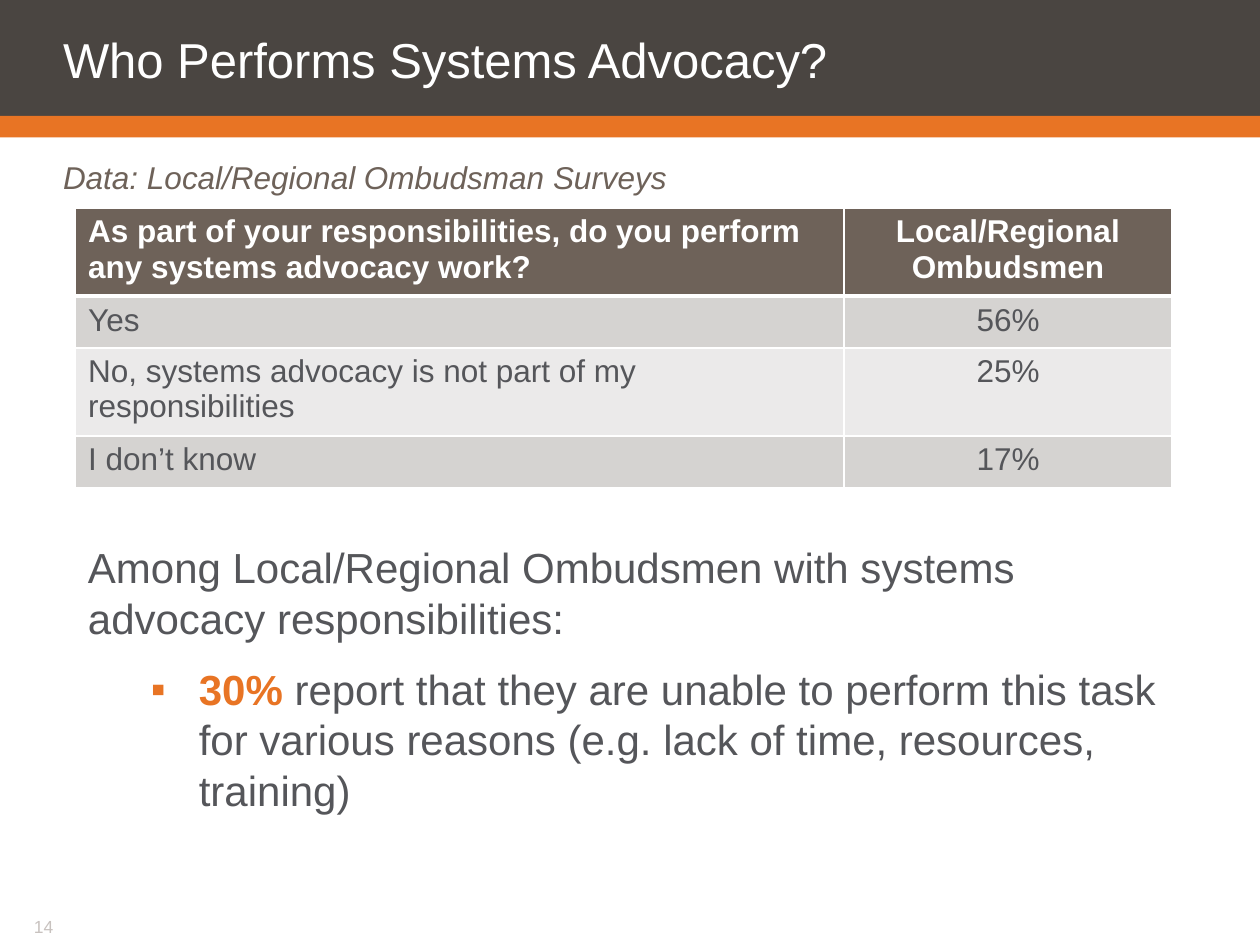
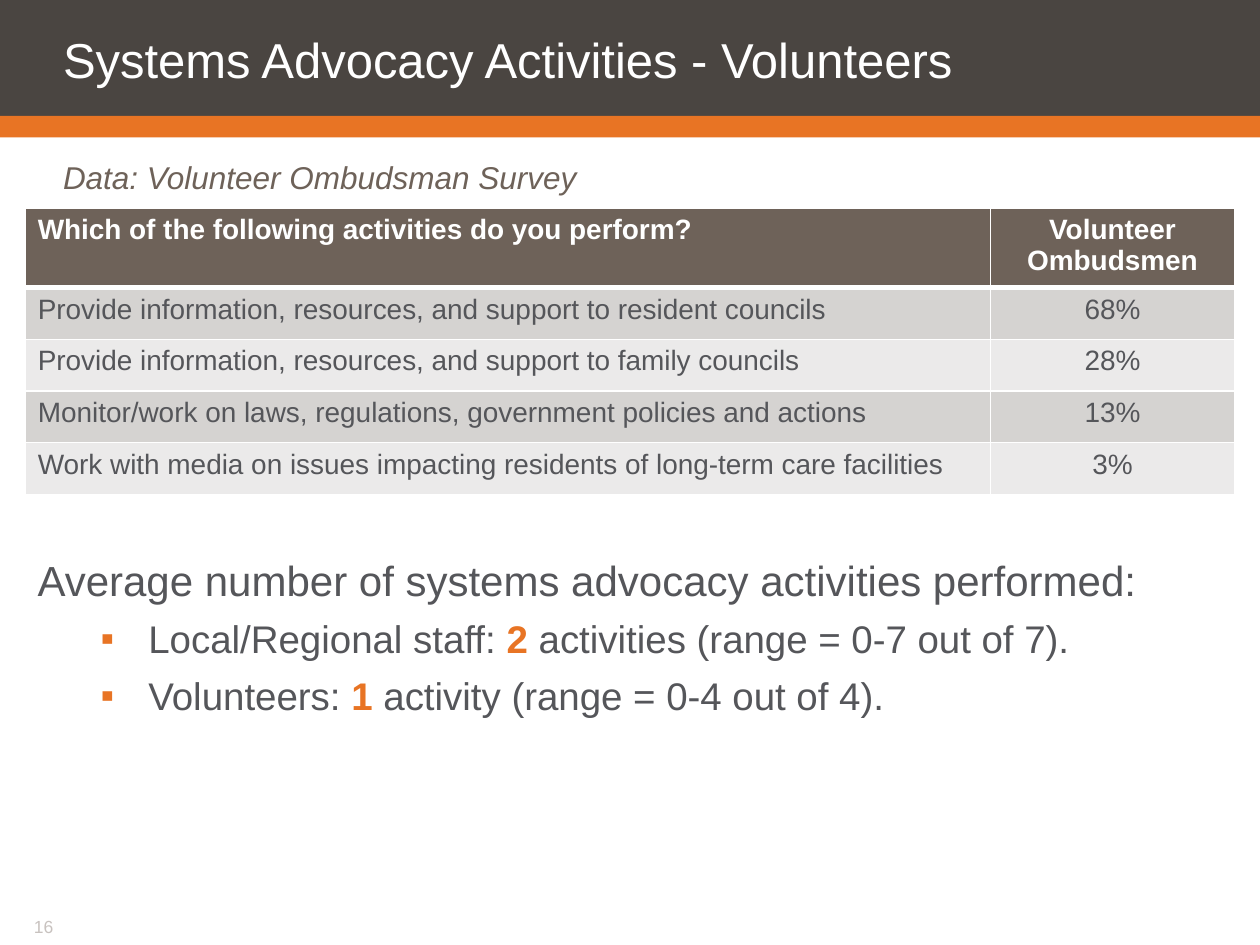
import pptx
import pptx.dml.color
import pptx.enum.shapes
import pptx.enum.text
import pptx.oxml
import pptx.oxml.ns
import pptx.util
from lxml import etree

Inches = pptx.util.Inches
Pt = pptx.util.Pt
ALIGN = pptx.enum.text.PP_ALIGN
ANCHOR = pptx.enum.text.MSO_ANCHOR

FONT = "Arial"
COLORS = {
    "band": "4A4541",
    "accent": "E87424",
    "header": "6E6259",
    "text": "55565A",
    "row_dark": "D5D3D1",
    "row_light": "EBEAEA",
    "page": "C8C2BF",
    "white": "FFFFFF",
}
SLIDE_WIDTH, SLIDE_HEIGHT = 10, 7.5
TITLE_BOX = (0, 0, SLIDE_WIDTH, 0.92)
STRIPE_BOX = (0, 0.92, SLIDE_WIDTH, 0.17)
SOURCE_BOX = (0, 1.22, SLIDE_WIDTH, 0.33)
PAGE_BOX = (0.17, 7.27, 1.92, 0.18)
ROW_HEIGHT = 0.41


def rgb(color):
    return pptx.dml.color.RGBColor.from_string(COLORS[color])


def style_font(font, size, color, bold=False, italic=False):
    font.name, font.size = FONT, Pt(size)
    font.bold, font.italic = bold, italic
    font.color.rgb = rgb(color)


def place(shape, box):
    shape.left, shape.top, shape.width, shape.height = map(Inches, box)


def set_insets(frame, left, top, right, bottom):
    frame.margin_left, frame.margin_top = Inches(left), Inches(top)
    frame.margin_right, frame.margin_bottom = Inches(right), Inches(bottom)


def add_child(parent, tag, **attributes):
    return etree.SubElement(parent, pptx.oxml.ns.qn(tag), attributes)


def set_bullet(paragraph, character=None):
    """Give the paragraph an indented orange bullet, or none at all."""
    properties = paragraph._p.get_or_add_pPr()
    if character is None:
        properties.set("marL", "0")
        properties.set("indent", "0")
        add_child(properties, "a:buNone")
        return
    properties.set("lvl", "1")
    properties.set("marL", str(Inches(0.88)))
    properties.set("indent", str(Inches(-0.38)))
    add_child(add_child(properties, "a:buClr"), "a:srgbClr", val=COLORS["accent"])
    add_child(properties, "a:buFont", typeface=FONT)
    add_child(properties, "a:buChar", char=character)


def add_band(slide, box, color):
    """Draw a full-width band behind everything else on the slide."""
    band = slide.shapes.add_shape(
        pptx.enum.shapes.MSO_SHAPE.RECTANGLE, *map(Inches, box))
    band.shadow.inherit = False
    band.fill.solid()
    band.fill.fore_color.rgb = rgb(color)
    band.line.fill.background()
    slide.shapes.element.insert(2, band._element)


def fill_placeholder(placeholder, box, text, insets, anchor):
    place(placeholder, box)
    frame = placeholder.text_frame
    frame.text = text
    frame.word_wrap = True
    frame.auto_size = pptx.enum.text.MSO_AUTO_SIZE.NONE
    frame.vertical_anchor = anchor
    set_insets(frame, *insets)
    paragraph = frame.paragraphs[0]
    set_bullet(paragraph)
    paragraph.alignment = ALIGN.LEFT
    paragraph.space_before = Pt(0)
    return paragraph


def add_page_number(slide, box, number):
    frame = slide.shapes.add_textbox(*map(Inches, box)).text_frame
    frame.word_wrap = False
    set_insets(frame, 0.1, 0, 0.1, 0.05)
    frame.text = str(number)
    style_font(frame.paragraphs[0].font, 10, "page")


def add_base_slide(presentation, title, source, number):
    slide = presentation.slides.add_slide(presentation.slide_layouts[1])
    add_band(slide, STRIPE_BOX, "accent")
    add_band(slide, TITLE_BOX, "band")
    heading = fill_placeholder(slide.shapes.title, TITLE_BOX, title,
                               (0.5, 0.1, 0.1, 0), ANCHOR.MIDDLE)
    heading.line_spacing = Pt(28)
    style_font(heading.font, 28, "white")
    source_line = fill_placeholder(slide.placeholders[1], SOURCE_BOX, source,
                                   (0.5, 0.03, 0, 0), ANCHOR.TOP)
    style_font(source_line.font, 18, "header", italic=True)
    add_page_number(slide, PAGE_BOX, number)
    return slide


def set_borders(cell, top, bottom):
    """Draw white borders; top and bottom are widths in points."""
    properties = cell._tc.get_or_add_tcPr()
    for side, width in (("L", 1), ("R", 1), ("T", top), ("B", bottom)):
        line = add_child(properties, f"a:ln{side}", w=str(Pt(width)))
        add_child(add_child(line, "a:solidFill"), "a:srgbClr", val=COLORS["white"])


def add_survey_table(slide, left, top, column_widths, rows, size):
    table = slide.shapes.add_table(
        len(rows), len(column_widths), Inches(left), Inches(top),
        Inches(sum(column_widths)), Inches(ROW_HEIGHT * len(rows))).table
    for column, width in zip(table.columns, column_widths):
        column.width = Inches(width)
    for row_index, values in enumerate(rows):
        is_header = row_index == 0
        if is_header:
            fill = "header"
        else:
            fill = "row_dark" if row_index % 2 else "row_light"
        for column_index, value in enumerate(values):
            cell = table.cell(row_index, column_index)
            set_borders(cell, 3 if row_index == 1 else 1, 3 if is_header else 1)
            cell.fill.solid()
            cell.fill.fore_color.rgb = rgb(fill)
            cell.text = value
            paragraph = cell.text_frame.paragraphs[0]
            paragraph.alignment = ALIGN.CENTER if column_index else ALIGN.LEFT
            style_font(paragraph.font, size, "white" if is_header else "text",
                       bold=is_header)


def add_findings(slide, box, lead, findings, size, spacing):
    """Add a lead sentence and bullets given as (before, emphasis, after)."""
    frame = slide.shapes.add_textbox(*map(Inches, box)).text_frame
    frame.word_wrap = True
    frame.text = lead
    frame.paragraphs[0].space_after = Pt(spacing)
    style_font(frame.paragraphs[0].font, 24, "text")
    for before, emphasis, after in findings:
        paragraph = frame.add_paragraph()
        set_bullet(paragraph, "▪")
        paragraph.space_after = Pt(spacing)
        style_font(paragraph.font, size, "text")
        for text in (before, emphasis, after):
            if text:
                run = paragraph.add_run()
                run.text = text
                if text == emphasis:
                    style_font(run.font, size, "accent", bold=True)


def build_performers_slide(presentation):
    slide = add_base_slide(presentation, "Who Performs Systems Advocacy?",
                           "Data: Local/Regional Ombudsman Surveys", 14)
    add_survey_table(slide, 0.6, 1.65, (6.1, 2.6), (
        ("As part of your responsibilities, do you perform any systems "
         "advocacy work?", "Local/Regional Ombudsmen"),
        ("Yes", "56%"),
        ("No, systems advocacy is not part of my responsibilities", "25%"),
        ("I don’t know", "17%"),
    ), 18)
    add_findings(
        slide, (0.6, 4.25, 8.7, 2.29),
        "Among Local/Regional Ombudsmen with systems advocacy responsibilities:",
        [("", "30%", " report that they are unable to perform this task for "
          "various reasons (e.g. lack of time, resources, training)")], 24, 12)


def build_volunteers_slide(presentation):
    slide = add_base_slide(presentation, "Systems Advocacy Activities - Volunteers",
                           "Data: Volunteer Ombudsman Survey", 16)
    add_survey_table(slide, 0.2, 1.65, (7.66, 1.94), (
        ("Which of the following activities do you perform?", "Volunteer Ombudsmen"),
        ("Provide information, resources, and support to resident councils", "68%"),
        ("Provide information, resources, and support to family councils", "28%"),
        ("Monitor/work on laws, regulations, government policies and actions", "13%"),
        ("Work with media on issues impacting residents of long-term care "
         "facilities", "3%"),
    ), 16)
    add_findings(
        slide, (0.2, 4.35, 9.6, 1.41),
        "Average number of systems advocacy activities performed:",
        [("Local/Regional staff: ", "2", " activities (range = 0-7 out of 7)."),
         ("Volunteers: ", "1", " activity (range = 0-4 out of 4).")], 22, 6)


def main():
    presentation = pptx.Presentation()
    presentation.slide_width = Inches(SLIDE_WIDTH)
    presentation.slide_height = Inches(SLIDE_HEIGHT)
    build_performers_slide(presentation)
    build_volunteers_slide(presentation)
    presentation.save("out.pptx")


if __name__ == "__main__":
    main()
